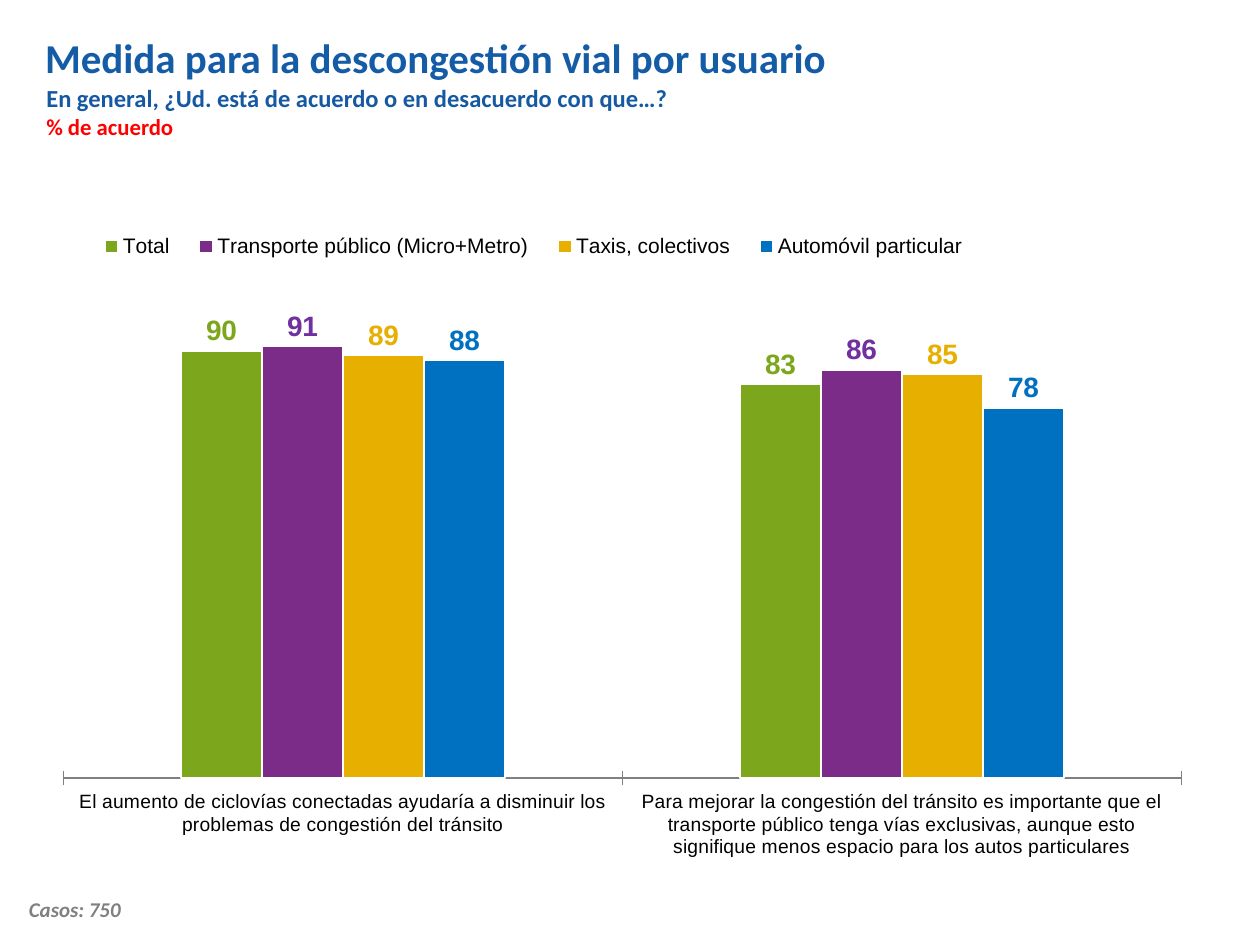
import pptx
import pptx.chart.data
import pptx.dml.color
import pptx.enum.chart
import pptx.enum.text
import pptx.oxml
import pptx.oxml.ns
import pptx.util
from pptx.util import Pt

COLORS = {
    "title": "155CA7", "question": "1559A2", "measure": "FF0000",
    "cases": "808080", "text": "000000", "axis": "808080", "gap": "FFFFFF",
    "total": "7CA71D", "public": "7B2C88", "public_label": "7030A0",
    "taxi": "E7AF00", "car": "0070C0",
}
CATEGORIES = [
    "El aumento de ciclovías conectadas ayudaría a disminuir los problemas de congestión del tránsito",
    "Para mejorar la congestión del tránsito es importante que el transporte público tenga vías "
    "exclusivas, aunque esto signifique menos espacio para los autos particulares",
]
USERS = [
    ("Total", (90, 83), "total", "total", 0.75),
    ("Transporte público (Micro+Metro)", (91, 86), "public", "public_label", 1),
    ("Taxis, colectivos", (89, 85), "taxi", "taxi", 0.75),
    ("Automóvil particular", (88, 78), "car", "car", 0.75),
]


def rgb(name):
    """Return the named colour."""
    return pptx.dml.color.RGBColor.from_string(COLORS[name])


def apply(target, **values):
    """Set each given attribute on the target."""
    for key, value in values.items():
        setattr(target, key, value)


def style_font(font, color, **values):
    """Give a font its colour and format values."""
    apply(font, **values)
    font.color.rgb = rgb(color)


def add_text(slide, box, lines, frame_format, alignment=None):
    """Place a text box with one formatted paragraph per line."""
    frame = slide.shapes.add_textbox(*map(Pt, box)).text_frame
    apply(frame, **frame_format)
    for index, (wording, color, size, italic) in enumerate(lines):
        paragraph = frame.add_paragraph() if index else frame.paragraphs[0]
        paragraph.alignment = alignment
        run = paragraph.add_run()
        run.text = wording
        style_font(run.font, color, name="Calibri", size=Pt(size), bold=True, italic=italic)


def set_layout(parent, position, x, y, w, h, target=""):
    """Fix a chart part at fractions of the chart area."""
    old = parent.find(pptx.oxml.ns.qn("c:layout"))
    if old is not None:
        parent.remove(old)
    parent.insert(position, pptx.oxml.parse_xml(
        f'<c:layout {pptx.oxml.ns.nsdecls("c")}><c:manualLayout>{target}'
        '<c:xMode val="edge"/><c:yMode val="edge"/>'
        f'<c:x val="{x}"/><c:y val="{y}"/><c:w val="{w}"/><c:h val="{h}"/>'
        '</c:manualLayout></c:layout>'))


def add_heading(slide, left, top):
    """Place the title, the question and the measure."""
    enum = pptx.enum.text
    add_text(slide, (left + 0.7, top + 34.6, 614, 41), [
        ("En general, ¿Ud. está de acuerdo o en desacuerdo con que…?", "question", 14, None),
        ("% de acuerdo", "measure", 13, None),
    ], {"word_wrap": True, "auto_size": enum.MSO_AUTO_SIZE.SHAPE_TO_FIT_TEXT},
        enum.PP_ALIGN.JUSTIFY)
    add_text(slide, (left, top, 581, 46), [
        ("Medida para la descongestión vial por usuario", "title", 23.4, None),
    ], {"word_wrap": True, "vertical_anchor": enum.MSO_ANCHOR.MIDDLE})


def add_agreement_chart(slide, left, top, width, height):
    """Place the chart of agreement by kind of user."""
    enum = pptx.enum.chart
    agreement = pptx.chart.data.CategoryChartData(number_format="0")
    agreement.categories = CATEGORIES
    for user, values, *_ in USERS:
        agreement.add_series(user, values)
    chart = slide.shapes.add_chart(
        enum.XL_CHART_TYPE.COLUMN_CLUSTERED, *map(Pt, (left, top, width, height)), agreement).chart
    apply(chart, has_title=False, has_legend=True)
    style_font(chart.font, "text", name="Calibri", size=Pt(12))
    apply(chart.plots[0], gap_width=290, overlap=0, vary_by_categories=False)

    for series, (_, _, fill, label, line_width) in zip(chart.plots[0].series, USERS):
        series.format.fill.solid()
        series.format.fill.fore_color.rgb = rgb(fill)
        series.format.line.color.rgb = rgb("gap")
        series.format.line.width = Pt(line_width)
        apply(series.data_labels, show_value=True, number_format="0",
              number_format_is_linked=False, position=enum.XL_LABEL_POSITION.OUTSIDE_END)
        style_font(series.data_labels.font, label, name="Arial", size=Pt(16), bold=True)

    apply(chart.value_axis, visible=False, has_major_gridlines=False,
          minimum_scale=0, maximum_scale=100)
    statements = chart.category_axis
    apply(statements, has_major_gridlines=False,
          major_tick_mark=enum.XL_TICK_MARK.CROSS, minor_tick_mark=enum.XL_TICK_MARK.NONE)
    statements.format.line.color.rgb = rgb("axis")
    style_font(statements.tick_labels.font, "text", name="Arial", size=Pt(11))

    apply(chart.legend, position=enum.XL_LEGEND_POSITION.TOP, include_in_layout=False)
    style_font(chart.legend.font, "text", name="Arial", size=Pt(12))
    qn = pptx.oxml.ns.qn
    set_layout(chart.element.find(f".//{qn('c:plotArea')}"), 0, 0.024, 0.169, 0.953, 0.7,
               '<c:layoutTarget val="inner"/>')
    set_layout(chart.element.find(f".//{qn('c:legend')}"), 1, 0.04, 0.05, 0.77, 0.07)


def add_cases(slide, left, top):
    """Place the number of cases."""
    add_text(slide, (left, top, 78.5, 21.6), [("Casos: 750", "cases", 12, True)],
             {"word_wrap": False, "auto_size": pptx.enum.text.MSO_AUTO_SIZE.SHAPE_TO_FIT_TEXT})


def main():
    """Build and save the slide."""
    deck = pptx.Presentation()
    apply(deck, slide_width=Pt(720), slide_height=Pt(540))
    slide = deck.slides.add_slide(deck.slide_layouts[6])
    add_cases(slide, 9.4, 509)
    add_agreement_chart(slide, 20.2, 108, 670.3, 387.4)
    add_heading(slide, 18.7, 9.4)
    deck.save("out.pptx")


if __name__ == "__main__":
    main()
